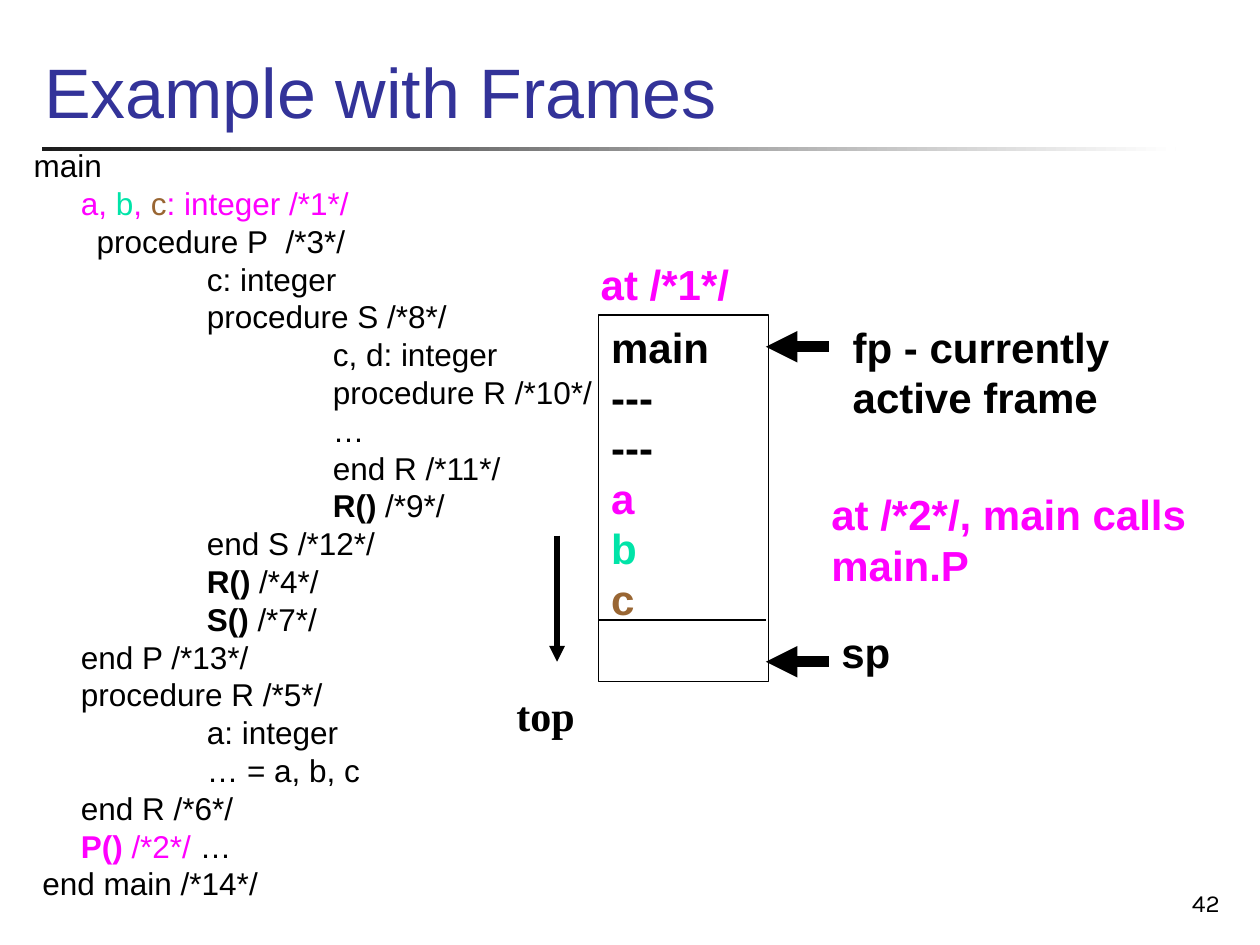
from lxml import etree
from pptx import Presentation
from pptx.dml.color import RGBColor
from pptx.enum.shapes import MSO_CONNECTOR as Connector, MSO_SHAPE as Preset
from pptx.enum.text import MSO_ANCHOR as Anchor, PP_ALIGN as Align
from pptx.oxml.ns import qn
from pptx.util import Cm, Pt

BLACK = RGBColor(0x00, 0x00, 0x00)
CHARCOAL = RGBColor(0x1C, 0x1C, 0x1C)
WHITE = RGBColor(0xFF, 0xFF, 0xFF)
NAVY = RGBColor(0x33, 0x33, 0x99)
MAGENTA = RGBColor(0xFF, 0x00, 0xFF)
GREEN = RGBColor(0x00, 0xE4, 0xA8)
BROWN = RGBColor(0x99, 0x66, 0x33)

BOLD = {"bold": True}
LABEL = {"size": Pt(24), "bold": True}
MARGINS = (0, 0.95, 3.49, 6.03)   # code indent per nesting level
TAB_STOPS = (0.95, 5.11)          # nested start, trailing comment

# Nesting level, then spans of (text, format)
CODE = [
    (0, [("main", {})]),
    (1, [("a,", {"color": MAGENTA}), (" b", {"color": GREEN}), (",", {"color": MAGENTA}),
         (" c", {"color": BROWN}), (": integer /*1*/", {"color": MAGENTA})]),
    (0, [("\tprocedure P\t/*3*/", {})]),
    (2, [("c: integer", {})]),
    (2, [("procedure S /*8*/", {})]),
    (3, [("c, d: integer", {})]),
    (3, [("procedure R /*10*/", {})]),
    (3, [("…", {})]),
    (3, [("end R /*11*/", {})]),
    (3, [("R()", BOLD), (" /*9*/", {})]),
    (2, [("end S /*12*/", {})]),
    (2, [("R()", BOLD), (" /*4*/", {})]),
    (2, [("S()", BOLD), (" /*7*/", {})]),
    (1, [("end P /*13*/", {})]),
    (1, [("procedure R /*5*/", {})]),
    (2, [("a: integer", {})]),
    (2, [("… = a, b, c", {})]),
    (1, [("end R /*6*/", {})]),
    (1, [("P()", {"color": MAGENTA, "bold": True}), (" /*2*/", {"color": MAGENTA}), (" …", {})]),
    (0, [(" end main /*14*/", {})]),
]


class Sketch:
    """Draws styled elements on one slide; lengths are in centimetres."""

    def __init__(self, page):
        self.page = page
        self.base = {"name": "Arial", "size": Pt(18), "bold": False, "color": BLACK}

    def add_spans(self, para, spans, style):
        for text, extra in spans:
            span = para.add_run()
            span.text = text
            look = {**self.base, **style, **extra}
            span.font.color.rgb = look.pop("color")
            for key, value in look.items():
                setattr(span.font, key, value)

    def fill_text(self, box, lines, style, wrap=False, anchor=Anchor.TOP, align=Align.LEFT):
        frame = box.text_frame
        for key, value in {"word_wrap": wrap, "vertical_anchor": anchor}.items():
            setattr(frame, key, value)
        for index, spans in enumerate(lines):
            para = frame.add_paragraph() if index else frame.paragraphs[0]
            para.alignment = align
            self.add_spans(para, spans, style)
        return frame.paragraphs

    def text(self, place, lines, style, **layout):
        box = self.page.shapes.add_textbox(*map(Cm, place))
        return self.fill_text(box, lines, style, **layout)

    def label(self, place, *lines, **extra):
        self.text(place, [[(line, {})] for line in lines], {**LABEL, **extra})

    def code(self, place, rows):
        paras = self.text(place, [spans for _, spans in rows], {}, wrap=True)
        for para, (level, _) in zip(paras, rows):
            para.line_spacing = 0.8
            para.space_before = Pt(4.3)
            props = para._p.get_or_add_pPr()
            props.set("marL", str(Cm(MARGINS[level])))
            props.set("indent", "0")
            if not level:
                stops = etree.SubElement(props, qn("a:tabLst"))
                for stop in TAB_STOPS:
                    etree.SubElement(stops, qn("a:tab"), pos=str(Cm(stop)), algn="l")

    def rule(self, place):
        bar = self.page.shapes.add_shape(Preset.RECTANGLE, *map(Cm, place))
        bar.shadow.inherit = False
        bar.line.fill.background()
        bar.fill.gradient()
        bar.fill.gradient_angle = 0
        for stop, color, position in zip(bar.fill.gradient_stops, (CHARCOAL, WHITE), (0, 1)):
            stop.color.rgb = color
            stop.position = position

    def frame(self, place, lines):
        box = self.page.shapes.add_shape(Preset.RECTANGLE, *map(Cm, place))
        box.shadow.inherit = False
        box.fill.background()
        box.line.color.rgb = BLACK
        box.line.width = Pt(0.75)
        self.fill_text(box, lines, LABEL, wrap=True)

    def line(self, ends, width, arrow=True):
        link = self.page.shapes.add_connector(Connector.STRAIGHT, *map(Cm, ends))
        link.line.color.rgb = BLACK
        link.line.width = Pt(width)
        props = link._element.spPr
        if arrow:
            etree.SubElement(props.find(qn("a:ln")), qn("a:tailEnd"), type="triangle")
        etree.SubElement(props, qn("a:effectLst"))


def main():
    deck = Presentation()
    deck.slide_width, deck.slide_height = Cm(25.4), Cm(19.05)
    sketch = Sketch(deck.slides.add_slide(deck.slide_layouts[6]))

    # Heading and page number
    sketch.rule((0.84, 2.97, 22.86, 0.08))
    sketch.text((19.56, 17.35, 5.28, 1.27), [[("42", {})]], {"name": "Karla", "size": Pt(14)},
                wrap=True, anchor=Anchor.BOTTOM, align=Align.RIGHT)
    sketch.text((0.64, 0, 24.18, 2.79), [[("Example with Frames", {})]],
                {"size": Pt(40), "color": NAVY}, wrap=True, anchor=Anchor.BOTTOM)

    # Program listing
    sketch.code((0.43, 2.97, 12.07, 12.9), CODE)

    # Stack frame of main
    variables = [("a", MAGENTA), ("b", GREEN), ("c", BROWN)]
    slots = [(slot, BLACK) for slot in ("main", "---", "---")] + variables
    sketch.frame((12.07, 6.35, 3.43, 7.39), [[(slot, {"color": color})] for slot, color in slots])
    sketch.line((12.07, 12.5, 15.44, 12.5), 0.75, arrow=False)

    # Pointers into the stack
    for height in (6.99, 13.34):
        sketch.line((16.71, height, 15.44, height), 6)
    sketch.label((16.94, 6.35, 5.74, 2.31), "fp - currently", "active frame")
    sketch.label((16.71, 12.5, 1.5, 1.27), "sp")

    # Growth direction
    sketch.line((11.23, 10.8, 11.23, 13.34), 3)
    sketch.label((10.16, 13.77, 1.68, 1.27), "top", name="Times New Roman")

    # Execution points
    sketch.label((11.86, 5.08, 3.18, 1.27), "at /*1*/", color=MAGENTA)
    sketch.label((16.51, 9.73, 7.75, 2.31), "at /*2*/, main calls", "main.P", color=MAGENTA)

    deck.save("out.pptx")


if __name__ == "__main__":
    main()
